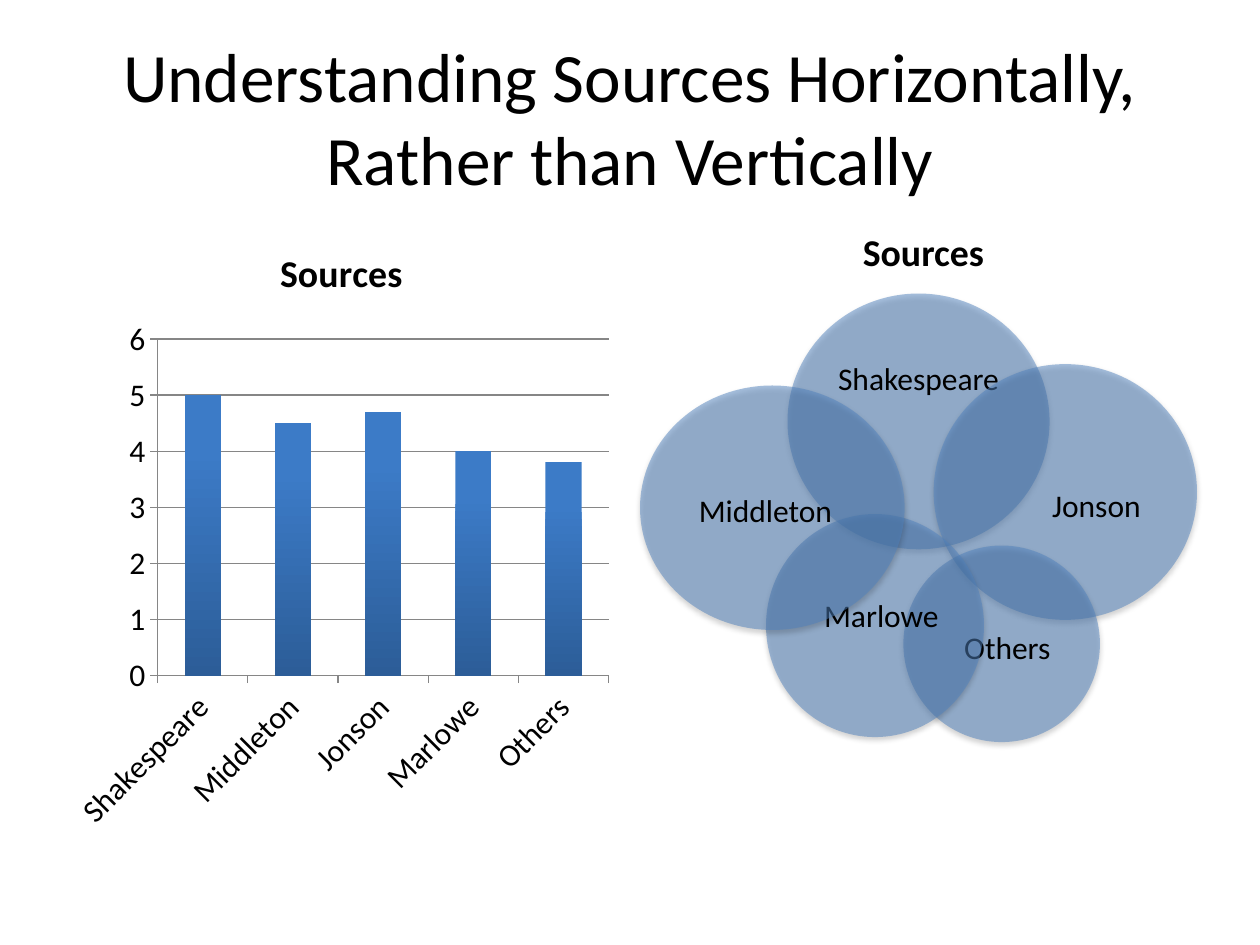
from lxml import etree
from pptx import Presentation
from pptx import util as u
from pptx.chart import data as chart_data
from pptx.dml.color import RGBColor
from pptx.enum import chart as charts, shapes, text
from pptx.oxml import parse_xml
from pptx.oxml.ns import nsdecls, qn

FONT = "Calibri"
COLORS = {"text": "000000", "circle": "4F81BD", "axis": "868686",
          "bar_top": "3C7BC7", "bar_bottom": "2C5D98"}
SOURCES = {"Shakespeare": 5, "Middleton": 4.5, "Jonson": 4.7,
           "Marlowe": 4, "Others": 3.8}
CENTER, LEFT = text.PP_ALIGN.CENTER, text.PP_ALIGN.LEFT

# Name, circle box, label box, label alignment; boxes are relative to the diagram
CIRCLES = [
    ("Shakespeare", (1.17, 0.58, 2.08, 2.03), (1.57, 0.9, 1.28, 0.74), CENTER),
    ("Jonson", (2.33, 1.14, 2.09, 2.03), (3.27, 1.88, 1.15, 0.8), LEFT),
    ("Others", (2.09, 2.58, 1.56, 1.56), (2.34, 3, 1.15, 0.8), CENTER),
    ("Marlowe", (1, 2.33, 1.73, 1.77), (1.34, 2.75, 1.15, 0.8), CENTER),
    ("Middleton", (0, 1.31, 2.1, 1.94), (0.42, 1.92, 1.15, 0.8), CENTER),
]


def rgb(name):
    return RGBColor.from_string(COLORS[name])


def style_font(font, size, bold=False):
    font.name, font.size, font.bold = FONT, u.Pt(size), bold
    font.color.rgb = rgb("text")


def add_text(slide, box, content, size, align=CENTER, bold=False, inset=None,
             anchor=text.MSO_ANCHOR.MIDDLE, spacing=None):
    frame = slide.shapes.add_textbox(*map(u.Inches, box)).text_frame
    frame.word_wrap = True
    frame.vertical_anchor = anchor
    if inset is not None:
        frame.margin_left = frame.margin_right = u.Inches(inset)
        frame.margin_top = frame.margin_bottom = u.Inches(inset)
    paragraph = frame.paragraphs[0]
    paragraph.alignment = align
    paragraph.line_spacing = spacing
    run = paragraph.add_run()
    run.text = content
    style_font(run.font, size, bold)


def add_circle(slide, box):
    circle = slide.shapes.add_shape(shapes.MSO_SHAPE.OVAL, *map(u.Inches, box))
    circle.fill.solid()
    circle.fill.fore_color.rgb = rgb("circle")
    circle.line.fill.background()
    # Half transparent fill and a soft shadow below
    properties = circle._element.spPr
    color = properties.find(qn("a:solidFill")).find(qn("a:srgbClr"))
    etree.SubElement(color, qn("a:alpha")).set("val", "50000")
    properties.append(parse_xml(
        f'<a:effectLst {nsdecls("a")}><a:outerShdw blurRad="{u.Pt(3.1)}" '
        f'dist="{u.Pt(1.8)}" dir="5400000" rotWithShape="0">'
        '<a:srgbClr val="000000"><a:alpha val="35000"/></a:srgbClr>'
        '</a:outerShdw></a:effectLst>'))


def add_circle_diagram(slide, left, top):
    def place(box):
        return left + box[0], top + box[1], box[2], box[3]

    for name, circle_box, label_box, align in CIRCLES:
        add_circle(slide, place(circle_box))
        add_text(slide, place(label_box), name, 18, align, inset=0, spacing=0.9)
    add_text(slide, place((1.67, 0.02, 1.17, 0.46)), "Sources", 21.6, LEFT,
             bold=True, anchor=text.MSO_ANCHOR.TOP)


def add_source_chart(slide, box):
    values = chart_data.CategoryChartData()
    values.categories = list(SOURCES)
    values.add_series("Sources", list(SOURCES.values()))
    chart = slide.shapes.add_chart(charts.XL_CHART_TYPE.COLUMN_CLUSTERED,
                                   *map(u.Inches, box), values).chart
    style_font(chart.font, 18)
    chart.has_legend = False

    # Title
    chart.has_title = True
    run = chart.chart_title.text_frame.paragraphs[0].add_run()
    run.text = "Sources"
    style_font(run.font, 21.6, bold=True)
    chart.chart_title.include_in_layout = False

    # Axes
    for axis in (chart.category_axis, chart.value_axis):
        axis.major_tick_mark = charts.XL_TICK_MARK.OUTSIDE
        axis.minor_tick_mark = charts.XL_TICK_MARK.NONE
        axis.format.line.color.rgb = rgb("axis")
        style_font(axis.tick_labels.font, 18)
    chart.category_axis._element.txPr.find(qn("a:bodyPr")).set("rot", "-2700000")
    scale = chart.value_axis
    scale.minimum_scale, scale.maximum_scale, scale.major_unit = 0, 6, 1
    scale.has_major_gridlines = True
    scale.major_gridlines.format.line.color.rgb = rgb("axis")

    # Bars
    plot = chart.plots[0]
    plot.gap_width = 150
    plot.vary_by_categories = False
    fill = plot.series[0].format.fill
    fill.gradient()
    fill.gradient_angle = 270
    for stop, position, color in zip(fill.gradient_stops, (0.2, 1),
                                     ("bar_top", "bar_bottom")):
        stop.position = position
        stop.color.rgb = rgb(color)

    # Plot area as shares of the chart
    area = chart._chartSpace.chart.plotArea
    for old in area.findall(qn("c:layout")):
        area.remove(old)
    sizes = "".join(f'<c:{key} val="{share}"/>' for key, share in
                    (("x", 0.17), ("y", 0.19), ("w", 0.81), ("h", 0.54)))
    area.insert(0, parse_xml(
        f'<c:layout {nsdecls("c")}><c:manualLayout><c:layoutTarget val="inner"/>'
        f'<c:xMode val="edge"/><c:yMode val="edge"/>{sizes}'
        '</c:manualLayout></c:layout>'))


def main():
    presentation = Presentation()
    presentation.slide_width, presentation.slide_height = u.Inches(10), u.Inches(7.5)
    slide = presentation.slides.add_slide(presentation.slide_layouts[6])
    add_source_chart(slide, (0.5, 1.75, 4.42, 4.95))
    add_text(slide, (0.5, 0.3, 9, 1.25),
             "Understanding Sources Horizontally, Rather than Vertically", 39.6)
    add_circle_diagram(slide, 5.08, 1.75)
    presentation.save("out.pptx")


if __name__ == "__main__":
    main()
